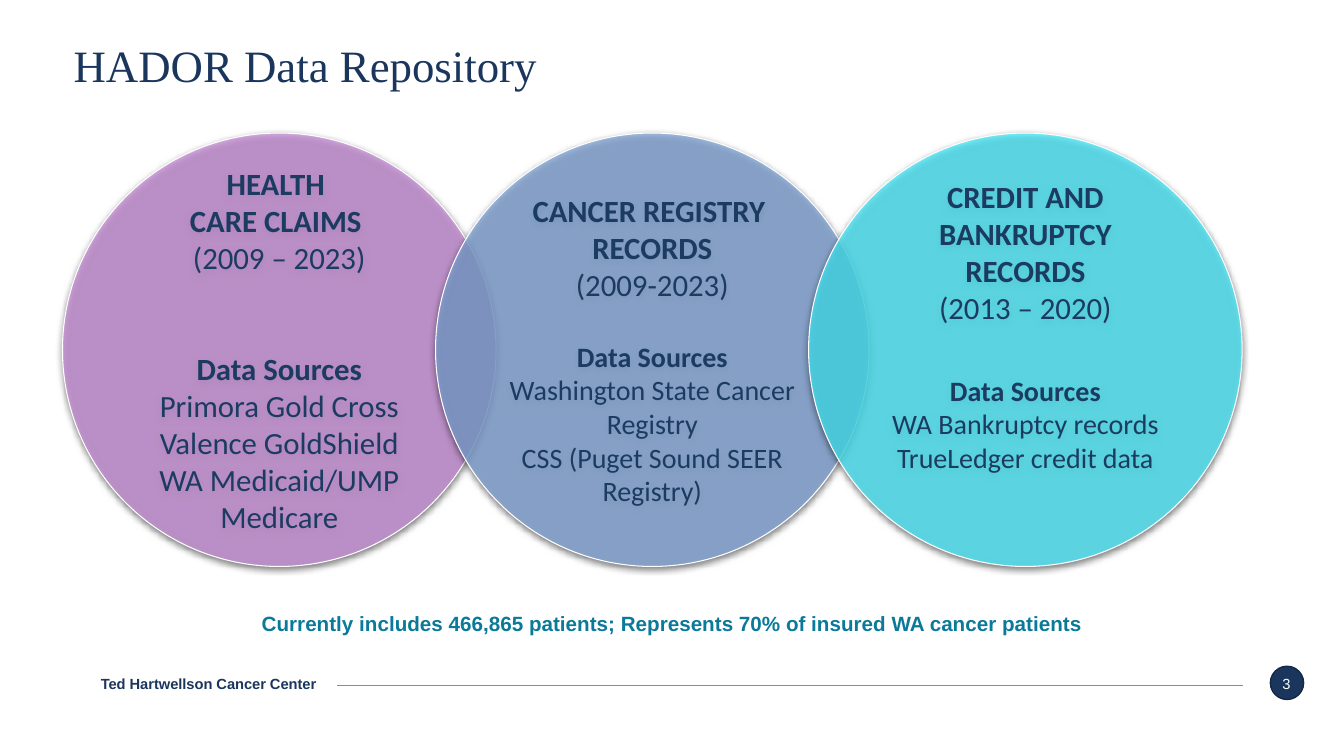
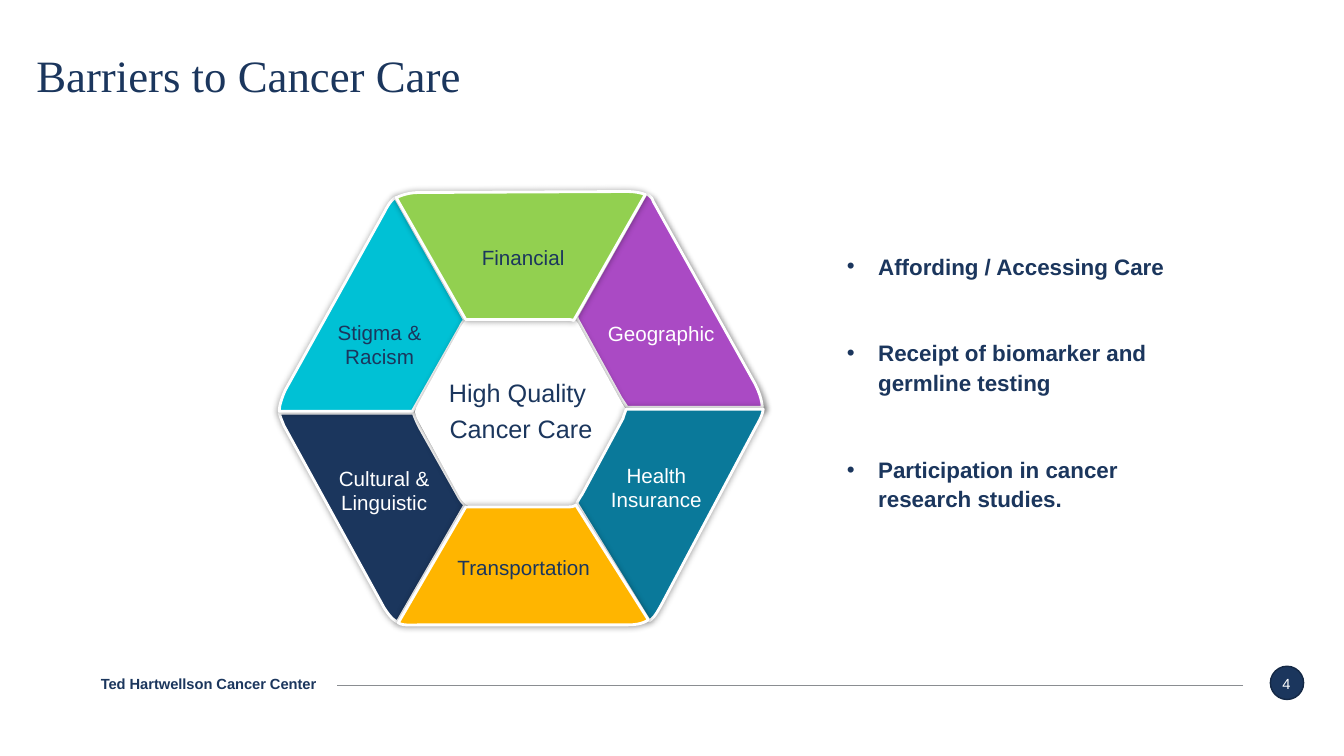
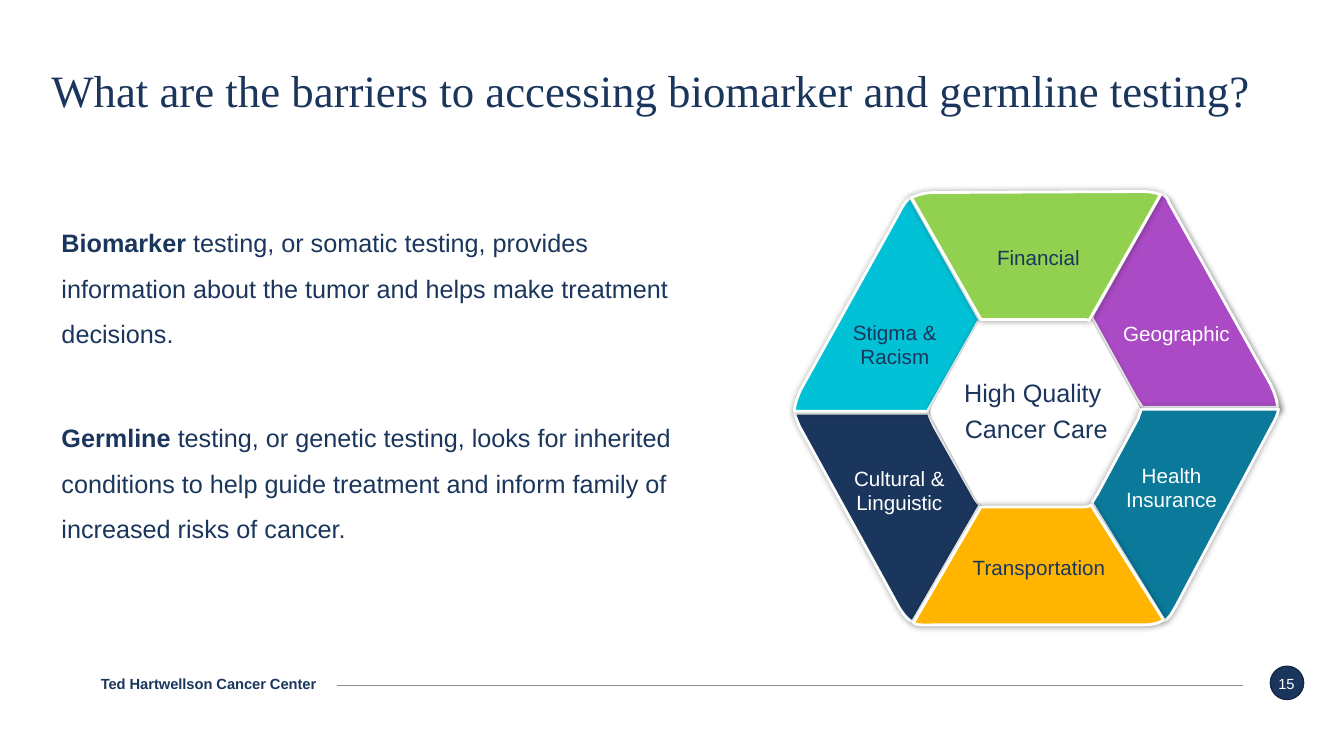
from lxml.etree import SubElement
from pptx import Presentation
from pptx.dml.color import RGBColor
from pptx.enum.shapes import MSO_CONNECTOR, MSO_SHAPE
from pptx.enum.text import MSO_ANCHOR, MSO_AUTO_SIZE, PP_ALIGN
from pptx.oxml.ns import qn
from pptx.util import Inches, Pt

COLORS = {
    "navy": "1B365D", "navy_edge": "142845", "ink": "1C3B61", "white": "FFFFFF",
    "rule": "8A8D91", "teal": "0A799A", "cyan": "00C1D5", "purple": "AA4AC4",
    "green": "92D050", "amber": "FFB500", "lilac": "CC92DC", "blue": "86A9DC",
    "aqua": "4DEEFF",
}
CENTER, LEFT = PP_ALIGN.CENTER, PP_ALIGN.LEFT
MIDDLE, TOP = MSO_ANCHOR.MIDDLE, MSO_ANCHOR.TOP
TITLE_ONLY, TITLE_AND_BODY = 5, 1

CIRCLES = [
    ("lilac", ["HEALTH ", "CARE CLAIMS "], "(2009 – 2023)",
     ["Primora Gold Cross", "Valence GoldShield", "WA Medicaid/UMP", "Medicare"], 22, 53, 0.05),
    ("blue", ["CANCER REGISTRY ", "RECORDS"], "(2009-2023)",
     ["Washington State Cancer Registry", "CSS (Puget Sound SEER Registry)"], 20, 26, 0.05),
    ("aqua", ["CREDIT AND BANKRUPTCY RECORDS"], "(2013 – 2020)",
     ["WA Bankruptcy records", "TrueLedger credit data"], 20, 34, 0.52),
]

WHEEL = {
    "navy": [(0, 2.2), (1.33, 2.2), (1.35, 2.26, 1.37, 2.3, 1.39, 2.34), (1.79, 3.05),
             (1.81, 3.08, 1.83, 3.1, 1.84, 3.11), (1.17, 4.27),
             (1.13, 4.25, 1.09, 4.21, 1.04, 4.13), (0.05, 2.33),
             (0.04, 2.31, 0.02, 2.26, 0, 2.2)],
    "purple": [(3.64, 0.02), (3.67, 0.04, 3.7, 0.06, 3.71, 0.1), (4.72, 1.91),
               (4.78, 2.03, 4.79, 2.11, 4.79, 2.14), (3.45, 2.14),
               (3.43, 2.11, 3.41, 2.08, 3.39, 2.05), (2.96, 1.27), (2.95, 1.24)],
    "cyan": [(1.15, 0.06), (1.84, 1.28), (1.82, 1.29, 1.81, 1.31, 1.79, 1.35),
             (1.32, 2.18), (0, 2.18), (0, 2.13, 0.02, 2.06, 0.06, 1.97), (1.04, 0.21),
             (1.08, 0.13, 1.11, 0.09, 1.15, 0.06)],
    "white": [(1.38, 2.25), (1.35, 2.18, 1.36, 2.17, 1.39, 2.11), (1.81, 1.35),
              (1.85, 1.29, 1.86, 1.27, 1.93, 1.27), (2.87, 1.27),
              (2.92, 1.28, 2.94, 1.29, 2.96, 1.33), (3.39, 2.11),
              (3.45, 2.2, 3.44, 2.2, 3.4, 2.28), (2.99, 3.02),
              (2.96, 3.08, 2.95, 3.1, 2.85, 3.11), (1.96, 3.11),
              (1.89, 3.11, 1.87, 3.12, 1.81, 3.04)],
    "teal": [(3.44, 2.16), (4.8, 2.16), (4.79, 2.22, 4.77, 2.26, 4.73, 2.33), (3.79, 4.1),
             (3.75, 4.17, 3.72, 4.23, 3.67, 4.26), (2.95, 3.09),
             (2.97, 3.06, 2.99, 3.02, 3, 3.01), (3.41, 2.25),
             (3.42, 2.21, 3.42, 2.22, 3.44, 2.16)],
    "amber": [(2.94, 3.11), (3.66, 4.25), (3.62, 4.28, 3.56, 4.3, 3.45, 4.3), (1.4, 4.3),
              (1.3, 4.3, 1.23, 4.31, 1.18, 4.28), (1.85, 3.13), (2.85, 3.13),
              (2.89, 3.13, 2.92, 3.13, 2.94, 3.11)],
    "green": [(3.63, 0.03), (2.92, 1.28), (2.9, 1.27, 2.88, 1.27, 2.83, 1.27), (1.85, 1.27),
              (1.16, 0.06), (1.21, 0.04, 1.28, 0.01, 1.38, 0.01), (3.44, 0),
              (3.52, 0, 3.58, 0.01, 3.63, 0.03)],
}
WHEEL_LABELS = [
    (["Geographic"], 3.16, 1.23, 1.43, "white", LEFT),
    (["Health", "Insurance"], 3, 2.64, 1.48, "white", CENTER),
    (["Cultural &", "Linguistic"], 0.3, 2.67, 1.48, "white", CENTER),
    (["Stigma &", "Racism"], 0.32, 1.22, 1.35, "navy", CENTER),
    (["Financial"], 1.91, 0.48, 1.11, "navy", LEFT),
    (["Transportation"], 1.51, 3.56, 1.83, "navy", CENTER),
]


def rgb(name):
    return RGBColor.from_string(COLORS[name])


def write(tf, text, lead="", size=18, font="Arial", color="navy", bold=False,
          align=LEFT, line=1.0, before=0, after=0):
    p = tf.add_paragraph() if tf.text else tf.paragraphs[0]
    p.alignment, p.line_spacing = align, line
    p.space_before, p.space_after = Pt(before), Pt(after)
    for words, strong in ((lead, True), (text, bold)):
        if words:
            r = p.add_run()
            r.text = words
            r.font.name, r.font.size, r.font.bold = font, Pt(size), strong
            r.font.color.rgb = rgb(color)
    return p


def set_frame(sp, anchor=TOP, inset=None):
    tf = sp.text_frame
    tf.word_wrap, tf.auto_size, tf.vertical_anchor = True, MSO_AUTO_SIZE.NONE, anchor
    if inset is not None:
        tf.margin_left = tf.margin_right = tf.margin_top = tf.margin_bottom = Inches(inset)
    return tf


def text_box(s, x, y, w, h, **frame):
    return set_frame(s.shapes.add_textbox(Inches(x), Inches(y), Inches(w), Inches(h)), **frame)


def fill_placeholder(sp, x, y, w, h, anchor=TOP):
    sp.left, sp.top, sp.width, sp.height = Inches(x), Inches(y), Inches(w), Inches(h)
    return set_frame(sp, anchor, 0)


def set_bullet(p, char="", indent=0.0):
    pPr = p._p.get_or_add_pPr()
    pPr.set("marL", str(Inches(indent)))
    pPr.set("indent", str(-Inches(indent)))
    if char:
        SubElement(pPr, qn("a:buChar")).set("char", char)
    else:
        SubElement(pPr, qn("a:buNone"))


def set_alpha(color, percent):
    SubElement(color, qn("a:alpha")).set("val", str(percent * 1000))


def paint(sp, fill, edge, width, alpha=None, shadow=None):
    sp.fill.solid()
    sp.fill.fore_color.rgb = rgb(fill)
    sp.line.color.rgb = rgb(edge)
    sp.line.width = Pt(width)
    sp.shadow.inherit = False
    spPr = sp._element.spPr
    if alpha:
        set_alpha(spPr.find(qn("a:solidFill")).find(qn("a:srgbClr")), alpha)
    if shadow:
        opacity, blur, dist, angle = shadow
        outer = SubElement(spPr.find(qn("a:effectLst")), qn("a:outerShdw"),
                           blurRad=str(Pt(blur)), dist=str(Pt(dist)),
                           dir=str(angle * 60000), algn="ctr", rotWithShape="0")
        color = SubElement(outer, qn("a:srgbClr"), val="000000")
        set_alpha(color, opacity)


def ellipse(s, x, y, size, **style):
    sp = s.shapes.add_shape(MSO_SHAPE.OVAL, Inches(x), Inches(y), Inches(size), Inches(size))
    paint(sp, **style)
    return sp


def add_footer(s, number):
    ellipse(s, 12.6, 6.61, 0.33, fill="navy", edge="navy_edge", width=1)
    write(text_box(s, 1, 6.58, 3.27, 0.4, anchor=MIDDLE, inset=0),
          "Ted Hartwellson Cancer Center", size=10.5, bold=True)
    rule = s.shapes.add_connector(MSO_CONNECTOR.STRAIGHT, Inches(12.33), Inches(6.8),
                                  Inches(3.34), Inches(6.8))
    rule.line.color.rgb = rgb("rule")
    rule.line.width = Pt(0.75)
    SubElement(rule._element.spPr, qn("a:effectLst"))
    write(text_box(s, 12.51, 6.58, 0.5, 0.4, anchor=MIDDLE), number,
          size=10.5, color="white", align=CENTER)


def new_slide(prs, layout, number, title, x, y, w=11.33):
    s = prs.slides.add_slide(prs.slide_layouts[layout])
    write(fill_placeholder(s.shapes.title, x, y, w, 1, MIDDLE), title,
          size=32, font="Times New Roman", line=0.9)
    add_footer(s, number)
    return s


def add_source_circle(s, x, y, size, color, heading, years, sources, source_size, gap, bottom):
    sp = ellipse(s, x, y, size, fill=color, edge="white", width=0.75, alpha=75,
                 shadow=(63, 4.5, 1.5, 90))
    tf = set_frame(sp, MIDDLE)
    tf.margin_bottom = Inches(bottom)
    style = dict(font="Calibri", color="ink", align=CENTER)
    for text in heading:
        write(tf, text, size=22, bold=True, **style)
    write(tf, years, size=22, **style)
    write(tf, "Data Sources", size=source_size, bold=True, before=gap, **style)
    for text in sources:
        write(tf, text, size=source_size, **style)


def trace(outline, steps=6):
    points = [outline[0]]
    for part in outline[1:]:
        if len(part) == 2:
            points.append(part)
            continue
        nodes = [points[-1], part[:2], part[2:4], part[4:]]
        for i in range(1, steps + 1):
            t = i / steps
            weights = ((1 - t) ** 3, 3 * t * (1 - t) ** 2, 3 * t * t * (1 - t), t ** 3)
            points.append(tuple(sum(k * n[axis] for k, n in zip(weights, nodes))
                                for axis in (0, 1)))
    return points


def add_wheel(s, x, y):
    for color, outline in WHEEL.items():
        points = [(Inches(x + px), Inches(y + py)) for px, py in trace(outline)]
        builder = s.shapes.build_freeform(*points[0])
        builder.add_line_segments(points[1:], close=True)
        sp = builder.convert_to_shape()
        shadow = (40, 4, 3, 45) if color == "purple" else (40, 5, 0, 0)
        paint(sp, color, "white", 2, shadow=shadow)
        if color == "white":
            tf = set_frame(sp, MIDDLE)
            write(tf, "High Quality ", align=CENTER, line=0.9, after=6.3)
            write(tf, "Cancer Care", align=CENTER, line=0.9)
    for lines, dx, dy, w, color, align in WHEEL_LABELS:
        tf = text_box(s, x + dx, y + dy, w, 0.35 if len(lines) == 1 else 0.6)
        for text in lines:
            write(tf, text, size=14.7, color=color, align=align)


def repository_slide(prs):
    s = new_slide(prs, TITLE_ONLY, "3", "HADOR Data Repository", 0.73, 0.17)
    for i, circle in enumerate(CIRCLES):
        add_source_circle(s, 0.62 + 3.7 * i, 1.32, 4.3, *circle)
    write(text_box(s, 2.46, 6.01, 8.41, 0.35),
          "Currently includes 466,865 patients; Represents 70% of insured WA cancer patients",
          size=14.7, color="teal", bold=True, align=CENTER)


def barriers_slide(prs):
    s = new_slide(prs, TITLE_AND_BODY, "4", "Barriers to Cancer Care", 0.36, 0.27)
    add_wheel(s, 2.77, 1.9)
    tf = fill_placeholder(s.placeholders[1], 8.4, 2.48, 3.19, 3.68)
    for i, text in enumerate(["Affording / Accessing Care",
                              "Receipt of biomarker and germline testing",
                              "Participation in cancer research studies."]):
        p = write(tf, text, size=16, bold=True, line=1.1, before=41 if i else 0)
        set_bullet(p, "•", 0.31)


def testing_slide(prs):
    s = new_slide(prs, TITLE_AND_BODY, "15",
                  "What are the barriers to accessing biomarker and germline testing?",
                  0.51, 0.42, 12.17)
    tf = fill_placeholder(s.placeholders[1], 0.61, 2.11, 6.45, 3.02)
    set_bullet(write(tf, " testing, or somatic testing, provides information about the tumor "
                         "and helps make treatment decisions.", lead="Biomarker", line=1.5))
    set_bullet(write(tf, " testing, or genetic testing, looks for inherited conditions to help "
                         "guide treatment and inform family of increased risks of cancer.",
                     lead="Germline", line=1.5, before=42))
    add_wheel(s, 7.88, 1.9)


def main():
    prs = Presentation()
    prs.slide_width, prs.slide_height = Inches(13.33), Inches(7.5)
    repository_slide(prs)
    barriers_slide(prs)
    testing_slide(prs)
    prs.save("out.pptx")


if __name__ == "__main__":
    main()
